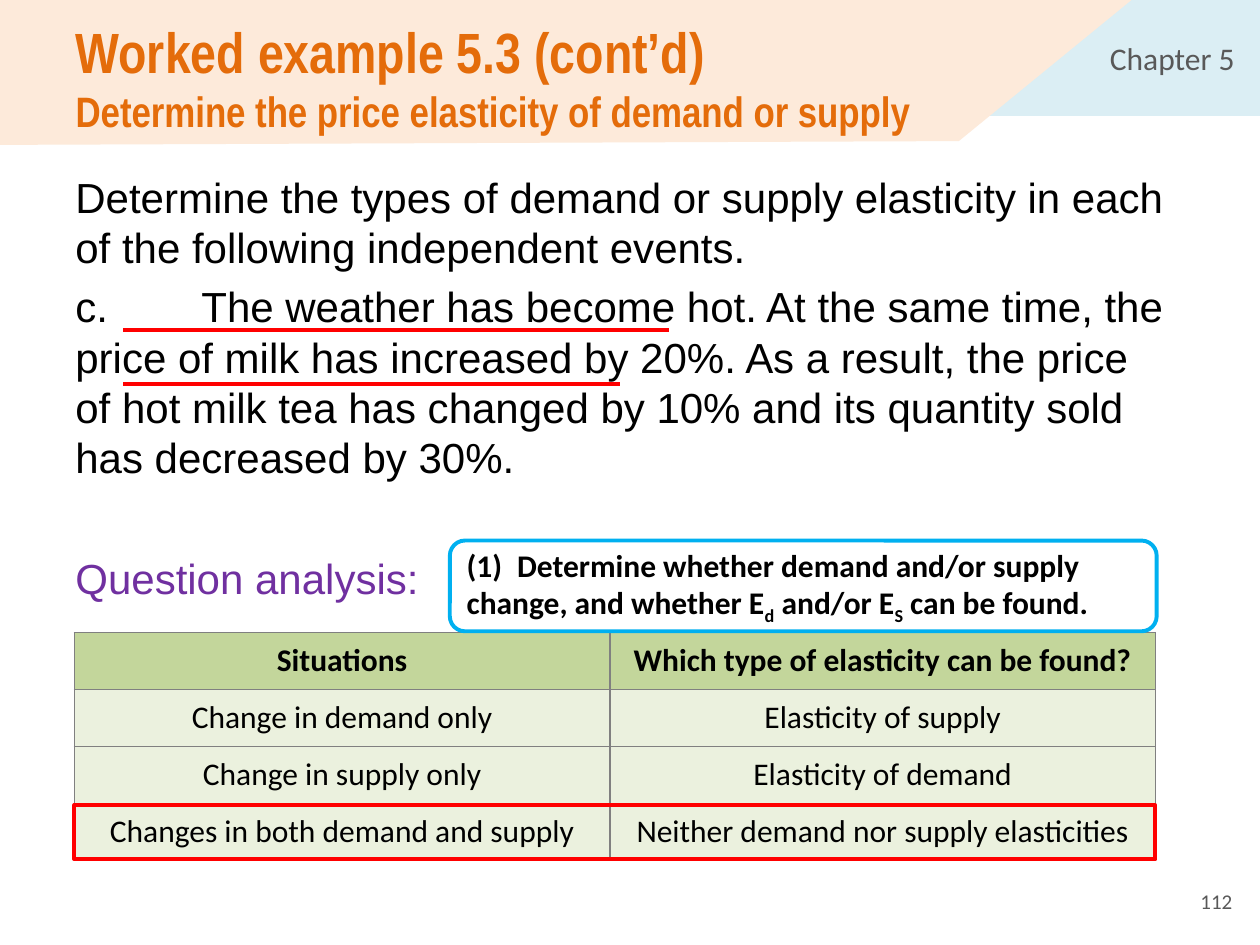
from lxml.etree import SubElement
from pptx import Presentation
from pptx.dml.color import RGBColor
from pptx.enum.shapes import MSO_CONNECTOR as Connector, MSO_SHAPE as Shape
from pptx.enum.text import MSO_ANCHOR as Anchor, MSO_AUTO_SIZE as AutoSize, PP_ALIGN as Align
from pptx.oxml.ns import qn
from pptx.util import Inches, Pt

COLORS = {
    "chapter": "DBEEF4", "banner": "FDEADA", "title": "E46C0A", "gray": "595959",
    "ink": "000000", "analysis": "7030A0", "mark": "FF0000", "callout": "00B0F0",
    "paper": "FFFFFF", "header": "C3D69B", "row": "EBF1DE", "border": "808080",
}


def rgb(name):
    return RGBColor.from_string(COLORS[name])


def write(paragraph, text, font="Calibri", size=18, color="ink", bold=False,
          align=Align.LEFT, before=0, tab=None, baseline=0):
    paragraph.alignment = align
    paragraph.space_before = Pt(before)
    if tab:
        stops = SubElement(paragraph._p.get_or_add_pPr(), qn("a:tabLst"))
        SubElement(stops, qn("a:tab"), pos=str(Inches(tab)), algn="l")
    for number, line in enumerate(text.split("\n")):
        if number:
            paragraph.add_line_break()
        if not line:
            continue
        run = paragraph.add_run()
        run.text = line
        run.font.name, run.font.size, run.font.bold = font, Pt(size), bold
        run.font.color.rgb = rgb(color)
        if baseline:
            run.font._element.set("baseline", str(baseline * 1000))


class SlideBuilder:
    def __init__(self, deck):
        self.slide = deck.slides.add_slide(deck.slide_layouts[5])
        self.shapes = self.slide.shapes

    def place(self, shape, box):
        shape.left, shape.top, shape.width, shape.height = map(Inches, box)

    def paint(self, shape, fill=None, line=None):
        shape.shadow.inherit = False
        if fill:
            shape.fill.solid()
            shape.fill.fore_color.rgb = rgb(fill)
        else:
            shape.fill.background()
        if line:
            shape.line.color.rgb = rgb(line)
            shape.line.width = Pt(2.25)
        else:
            shape.line.fill.background()

    def frame(self, shape, anchor=Anchor.MIDDLE):
        frame = shape.text_frame
        frame.word_wrap = True
        frame.auto_size = AutoSize.NONE
        frame.vertical_anchor = anchor
        return frame

    def shape(self, kind, box, fill=None, line=None):
        shape = self.shapes.add_shape(kind, *map(Inches, box))
        self.paint(shape, fill, line)
        return shape

    def outline(self, points, fill):
        corners = [(Inches(x), Inches(y)) for x, y in points]
        builder = self.shapes.build_freeform(*corners[0])
        builder.add_line_segments(corners[1:], close=True)
        self.paint(builder.convert_to_shape(), fill)

    def title(self, box, lines):
        title = self.shapes.title
        self.place(title, box)
        self.shapes._spTree.append(title._element)
        paragraph = self.frame(title).paragraphs[0]
        for text, size in lines:
            write(paragraph, text, font="Arial Narrow", size=size, color="title", bold=True)

    def text(self, box, paragraphs, anchor=Anchor.MIDDLE, **style):
        frame = self.frame(self.shapes.add_textbox(*map(Inches, box)), anchor)
        for number, (text, own) in enumerate(paragraphs):
            paragraph = frame.add_paragraph() if number else frame.paragraphs[0]
            write(paragraph, text, **{**style, **own})

    def underline(self, left, right, y):
        rule = self.shapes.add_connector(
            Connector.STRAIGHT, Inches(left), Inches(y), Inches(right), Inches(y))
        rule.line.color.rgb = rgb("mark")
        rule.line.width = Pt(2.25)
        SubElement(rule._element.spPr, qn("a:effectLst"))

    def border(self, cell):
        properties = cell._tc.get_or_add_tcPr()
        for position, side in enumerate(("lnL", "lnR", "lnT", "lnB")):
            edge = SubElement(properties, qn(f"a:{side}"), w=str(Pt(1)))
            fill = SubElement(edge, qn("a:solidFill"))
            SubElement(fill, qn("a:srgbClr"), val=COLORS["border"])
            properties.insert(position, edge)

    def table(self, box, widths, rows):
        table = self.shapes.add_table(len(rows), len(widths), *map(Inches, box)).table
        for column, width in zip(table.columns, widths):
            column.width = Inches(width)
        for r, row in enumerate(rows):
            for c, text in enumerate(row):
                cell = table.cell(r, c)
                cell.vertical_anchor = Anchor.MIDDLE
                cell.fill.solid()
                cell.fill.fore_color.rgb = rgb("row" if r else "header")
                self.border(cell)
                write(cell.text_frame.paragraphs[0], text, bold=r == 0, align=Align.CENTER)


def main():
    deck = Presentation()
    deck.slide_width, deck.slide_height = Inches(10), Inches(7.5)
    page = SlideBuilder(deck)

    chapter = page.shape(Shape.RECTANGLE, (7.36, 0, 2.64, 0.92), fill="chapter")
    chapter_frame = page.frame(chapter)
    chapter_frame.margin_right = Inches(0.2)
    write(chapter_frame.paragraphs[0], "Chapter 5", color="gray", align=Align.RIGHT)
    page.outline([(0, 0), (8.98, 0), (7.61, 1.12), (0, 1.15)], "banner")

    page.title((0.5, 0.21, 7.49, 0.79), [
        ("Worked example 5.3 (cont’d)\n", 32.4),
        ("Determine the price elasticity of demand or supply", 24.3),
    ])
    page.text((0.5, 1.31, 9.15, 3.58), [
        ("Determine the types of demand or supply elasticity in each of the "
         "following independent events.", {}),
        ("c.\tThe weather has become hot. At the same time, the\n"
         "price of milk has increased by 20%. As a result, the price\n"
         "of hot milk tea has changed by 10% and its quantity sold\n"
         "has decreased by 30%.", {"before": 5, "tab": 1}),
        ("Question analysis:", {"before": 40, "color": "analysis"}),
    ], anchor=Anchor.TOP, font="Arial", size=24)
    page.text((7.55, 6.95, 2.33, 0.4), [("112", {})],
              size=12, color="gray", align=Align.RIGHT)

    page.underline(0.98, 5.31, 2.62)
    page.underline(0.98, 4.92, 3.05)

    page.table((0.59, 5.02, 8.58, 1.81), (4.25, 4.33), [
        ("Situations", "Which type of elasticity can be found?"),
        ("Change in demand only", "Elasticity of supply"),
        ("Change in supply only", "Elasticity of demand"),
        ("Changes in both demand and supply", "Neither demand nor supply elasticities"),
    ])
    page.shape(Shape.RECTANGLE, (0.59, 6.39, 8.58, 0.43), line="mark")

    callout = page.shape(Shape.ROUNDED_RECTANGLE, (3.57, 4.29, 5.61, 0.72), "paper", "callout")
    hint = page.frame(callout).paragraphs[0]
    write(hint, "(1)\tDetermine whether demand and/or supply\nchange, and whether E",
          bold=True, tab=0.4)
    for text, baseline in (("d", -25), (" and/or E", 0), ("S", -25), (" can be found.", 0)):
        write(hint, text, bold=True, baseline=baseline)

    deck.save("out.pptx")


if __name__ == "__main__":
    main()
